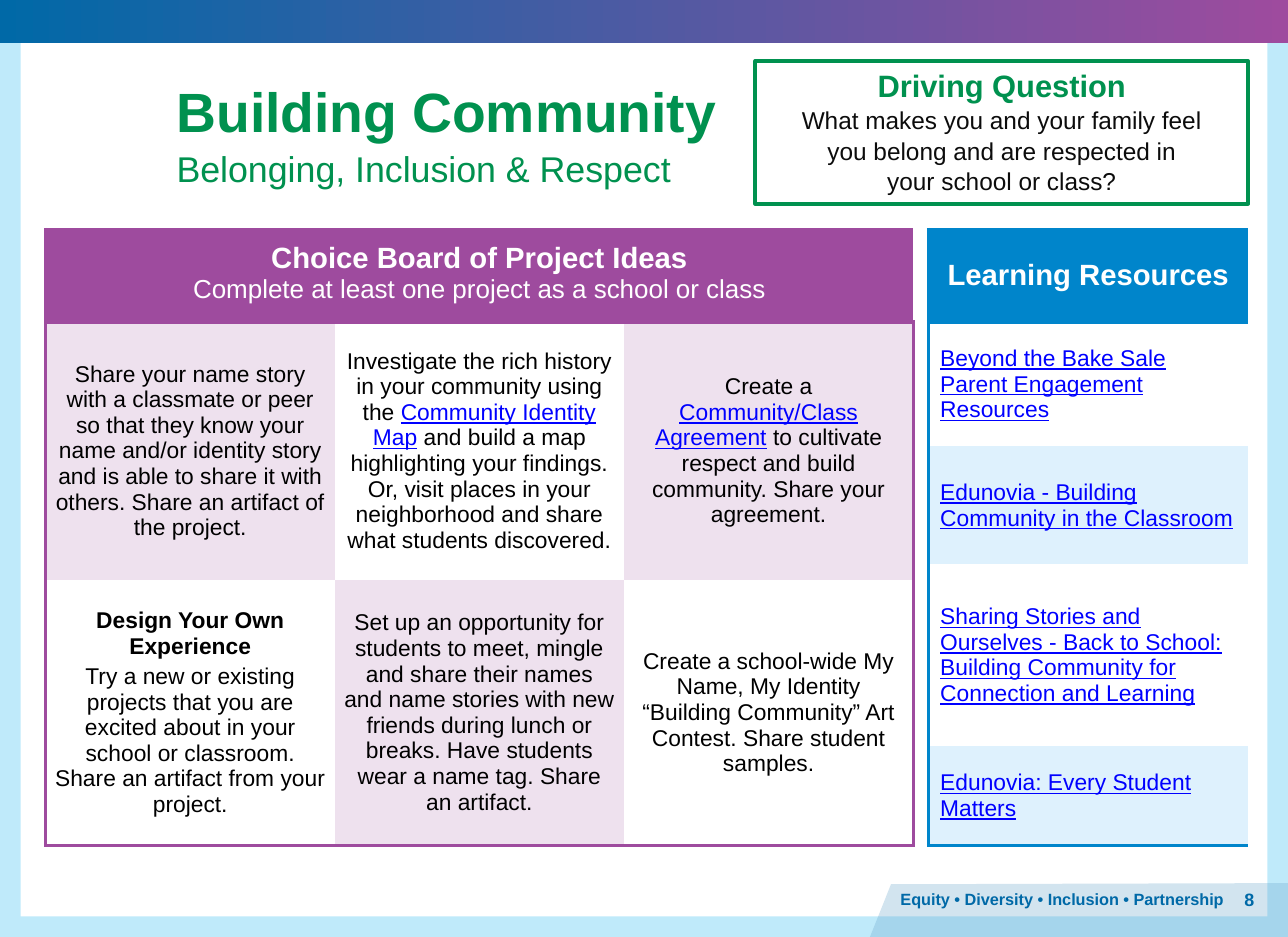
from lxml import etree
from pptx import Presentation
from pptx.dml.color import RGBColor
from pptx.enum.shapes import MSO_SHAPE
from pptx.enum.text import MSO_ANCHOR, PP_ALIGN
from pptx.oxml.ns import qn
from pptx.util import Inches, Pt

LEFT, CENTER, RIGHT = PP_ALIGN.LEFT, PP_ALIGN.CENTER, PP_ALIGN.RIGHT
TOP, MIDDLE = MSO_ANCHOR.TOP, MSO_ANCHOR.MIDDLE
FRAME, RECTANGLE = MSO_SHAPE.FRAME, MSO_SHAPE.RECTANGLE

COLORS = {
    "navy": "0069A7", "purple": "9E4B9E", "lilac": "EEE1EE",
    "blue": "0085CB", "sky": "DEF1FD", "cyan": "00ADEE",
    "steel": "66A5CA", "green": "00914F", "link": "0000FF",
    "ink": "0C0C0C", "black": "000000", "white": "FFFFFF",
}


def rgb(name):
    return RGBColor.from_string(COLORS[name])


def write(frame, text, size=14, color="black", bold=False, underline=False,
          align=LEFT, before=0, line=None, same_paragraph=False):
    paragraph = frame.paragraphs[-1]
    if paragraph.runs and not same_paragraph:
        paragraph = frame.add_paragraph()
    paragraph.alignment = align
    if before:
        paragraph.space_before = Pt(before)
    if line:
        paragraph.line_spacing = line
    for index, part in enumerate(text.split("\n")):
        if index:
            paragraph.add_line_break()
        run = paragraph.add_run()
        run.text = part
        run.font.name = "Arial"
        run.font.size = Pt(size)
        run.font.bold = bold
        run.font.underline = underline
        run.font.color.rgb = rgb(color)


prs = Presentation()
prs.slide_width, prs.slide_height = Inches(11), Inches(8)
slide = prs.slides.add_slide(prs.slide_layouts[6])
shapes = slide.shapes

page_frame = shapes.add_shape(FRAME, 0, 0, Inches(11), Inches(8))
page_frame.adjustments[0] = 0.022

top_band = shapes.add_shape(RECTANGLE, 0, 0, Inches(11), Inches(0.37))
top_band.fill.gradient()
top_band.fill.gradient_angle = 0
for stop, color in zip(top_band.fill.gradient_stops, ("navy", "purple")):
    stop.color.rgb = rgb(color)

outline = shapes.build_freeform(Inches(7.61), Inches(7.55), scale=1.0)
outline.add_line_segments(
    [(Inches(x), Inches(y)) for x, y in ((11, 7.54), (11, 8), (7.43, 8))], close=True)
footer_tab = outline.convert_to_shape()

for part, color, alpha in ((page_frame, "cyan", 25), (footer_tab, "steel", 29)):
    part.fill.solid()
    part.fill.fore_color.rgb = rgb(color)
    tone = part.fill._xPr.find(qn("a:solidFill"))[0]
    etree.SubElement(tone, qn("a:alpha"), val=str(alpha * 1000))

for part in (page_frame, top_band, footer_tab):
    part.line.fill.background()
    part.shadow.inherit = False

page_number = shapes.add_textbox(Inches(10.34), Inches(7.54), Inches(0.47), Inches(0.27)).text_frame
page_number.word_wrap = True
page_number.vertical_anchor = MIDDLE
write(page_number, "8", size=11, color="navy", bold=True, align=RIGHT)

motto = shapes.add_textbox(Inches(7.58), Inches(7.54), Inches(2.98), Inches(0.27)).text_frame
motto.word_wrap = True
write(motto, "Equity • Diversity • Inclusion • Partnership",
      size=10, color="navy", bold=True, align=CENTER)

heading = shapes.add_textbox(Inches(1.41), Inches(0.56), Inches(4.86), Inches(1.17)).text_frame
heading.word_wrap = True
heading.margin_top = heading.margin_bottom = Inches(0.1)
write(heading, "Building Community", size=34, color="green", bold=True)
write(heading, "Belonging, Inclusion & Respect", size=22, color="green", before=2)

question_box = shapes.add_shape(RECTANGLE, Inches(6.45), Inches(0.52), Inches(4.21), Inches(1.22))
question_box.shadow.inherit = False
question_box.fill.background()
question_box.line.color.rgb = rgb("green")
question_box.line.width = Pt(2.25)
question = question_box.text_frame
question.word_wrap = True
question.vertical_anchor = TOP
question.margin_bottom = Inches(0.1)
write(question, "Driving Question", size=19, color="green", bold=True, align=CENTER)
write(question, "What makes you and your family feel\nyou belong and are respected in\n"
      "your school or class?", size=15, color="ink", align=CENTER, line=1.05)

PLAIN = {"align": CENTER}
MORE = {"align": CENTER, "same_paragraph": True}
INLINE_LINK = {**MORE, "color": "link", "underline": True}
RESOURCE = {"color": "link", "underline": True}
TITLE = {"size": 18, "color": "white", "bold": True, "align": CENTER}

project_rows = [
    [[("Choice Board of Project Ideas", TITLE),
      ("Complete at least one project as a school or class",
       {"size": 16, "color": "white", "align": CENTER})]],
    [[("Share your name story with a classmate or peer so that they know your name "
       "and/or identity story and is able to share it with others. "
       "Share an artifact of the project.", PLAIN)],
     [("Investigate the rich history in your community using the ", PLAIN),
      ("Community Identity Map", INLINE_LINK),
      (" and build a map highlighting your findings. Or, visit places in your "
       "neighborhood and share what students discovered.", MORE)],
     [("Create a ", PLAIN),
      ("Community/Class Agreement", INLINE_LINK),
      (" to cultivate respect and build community. Share your agreement.", MORE)]],
    [[("Design Your Own Experience", {"bold": True, "align": CENTER}),
      ("Try a new or existing projects that you are excited about in your school or "
       "classroom. Share an artifact from your project.", {"align": CENTER, "before": 3})],
     [("Set up an opportunity for students to meet, mingle and share their names and "
       "name stories with new friends during lunch or breaks. Have students wear a "
       "name tag. Share an artifact.", PLAIN)],
     [("Create a school-wide My Name, My Identity “Building Community” Art Contest. "
       "Share student samples.", PLAIN)]],
]
resource_rows = [
    [[("Learning Resources", TITLE)]],
    [[("Beyond the Bake Sale Parent Engagement Resources", RESOURCE)]],
    [[("Edunovia - Building Community in the Classroom", RESOURCE)]],
    [[("Sharing Stories and Ourselves - Back to School: Building Community for "
       "Connection and Learning", RESOURCE)]],
    [[("Edunovia: Every Student Matters", RESOURCE)]],
]
boards = [
    (0.39, [2.47] * 3, [0.79, 2.2, 2.27], project_rows, "purple", "lilac", 1, TOP, 0.08),
    (7.93, [0.86, 1.87], [0.79, 1.06, 1.01, 1.55, 0.85], resource_rows,
     "blue", "sky", 0, MIDDLE, 0.1),
]

for left, widths, heights, rows, accent, tint, tinted, header_anchor, side in boards:
    board = shapes.add_table(len(heights), len(widths), Inches(left), Inches(1.96),
                             Inches(sum(widths)), Inches(sum(heights))).table
    for column, width in zip(board.columns, widths):
        column.width = Inches(width)
    last_row, last_column = len(heights) - 1, len(widths) - 1
    for r, (height, contents) in enumerate(zip(heights, rows)):
        board.rows[r].height = Inches(height)
        spans = len(contents) == 1
        if spans:
            board.cell(r, 0).merge(board.cell(r, last_column))
        for c in range(len(widths)):
            cell = board.cell(r, c)
            edges = {"L": c == 0, "R": c == last_column,
                     "T": r <= 1, "B": r in (0, last_row)}
            for edge, drawn in edges.items():
                border = etree.SubElement(cell._tc.get_or_add_tcPr(), qn("a:ln" + edge), w="28575")
                ink = etree.SubElement(border, qn("a:solidFill" if drawn else "a:noFill"))
                if drawn:
                    etree.SubElement(ink, qn("a:srgbClr"), val=COLORS[accent])
            if r == 0 or (r + (0 if spans else c)) % 2 == tinted:
                cell.fill.solid()
                cell.fill.fore_color.rgb = rgb(tint if r else accent)
            else:
                cell.fill.background()
            if c < len(contents):
                cell.vertical_anchor = MIDDLE if r else header_anchor
                cell.margin_left = cell.margin_right = Inches(side if r else 0.08)
                cell.margin_top = cell.margin_bottom = Inches(0.11)
                for text, style in contents[c]:
                    write(cell.text_frame, text, **style)

prs.save("out.pptx")
